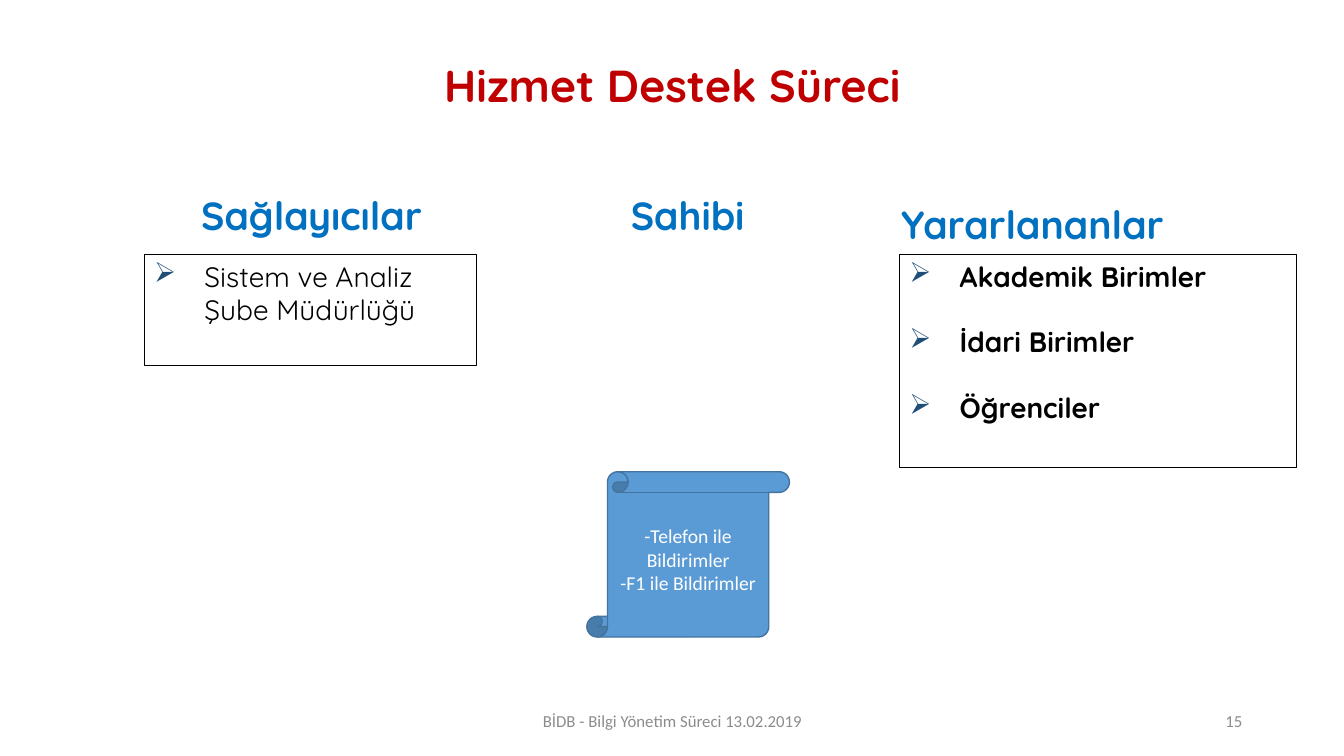
from lxml import etree
from pptx import Presentation
from pptx.dml.color import RGBColor
from pptx.enum import shapes, text
from pptx.oxml import ns
from pptx.util import Inches, Pt

COLORS = {
    "title": "C00000", "heading": "0070C0", "bullet": "1F4E79",
    "body": "000000", "footer": "8C8C8C", "scroll": "5B9BD5",
    "scroll_line": "43739E", "scroll_text": "FFFFFF",
}
ALIGN = text.PP_ALIGN
ANCHOR = text.MSO_ANCHOR


def write(shape, lines, size, color, font="Quicksand", bold=False,
          align=ALIGN.CENTER, anchor=ANCHOR.TOP):
    """Fill a shape with one formatted paragraph per line."""
    frame = shape.text_frame
    frame.text = "\n".join(lines)
    frame.word_wrap = True
    frame.auto_size = text.MSO_AUTO_SIZE.NONE
    frame.vertical_anchor = anchor
    for paragraph in frame.paragraphs:
        paragraph.alignment = align
        for run in paragraph.runs:
            run.font.name = font
            run.font.size = Pt(size)
            run.font.bold = bold
            run.font.color.rgb = RGBColor.from_string(COLORS[color])


def add_bullet(paragraph):
    """Give a paragraph a coloured arrow bullet with a hanging indent."""
    properties = paragraph._p.get_or_add_pPr()
    properties.set("marL", str(Inches(0.5)))
    properties.set("indent", str(Inches(-0.5)))
    bullet_color = etree.SubElement(properties, ns.qn("a:buClr"))
    etree.SubElement(bullet_color, ns.qn("a:srgbClr"), val=COLORS["bullet"])
    etree.SubElement(properties, ns.qn("a:buChar"), char="➢")


prs = Presentation()
prs.slide_width, prs.slide_height = Inches(13.33), Inches(7.5)
slide = prs.slides.add_slide(prs.slide_layouts[5])

# Title
title = slide.shapes.title
title.left, title.top = Inches(0.92), Inches(0.4)
title.width, title.height = Inches(11.5), Inches(1.45)
write(title, ["Hizmet Destek Süreci"], 32, "title", bold=True, anchor=ANCHOR.MIDDLE)
title.text_frame.margin_bottom = Inches(0.55)
title.text_frame.paragraphs[0].line_spacing = 0.9

# Column headings
for label, left, top in [("Sağlayıcılar", 1.12, 1.85), ("Sahibi", 4.85, 1.85),
                         ("Yararlananlar", 8.27, 1.94)]:
    heading = slide.shapes.add_textbox(Inches(left), Inches(top), Inches(3.94), Inches(0.57))
    write(heading, [label], 28, "heading", bold=True)

# Providers and beneficiaries
for parties, left, width, height, bold in [
    (["Sistem ve Analiz Şube Müdürlüğü"], 1.43, 3.3, 1.11, False),
    (["Akademik Birimler", "İdari Birimler", "Öğrenciler"], 8.92, 3.94, 2.12, True),
]:
    party_box = slide.shapes.add_shape(shapes.MSO_SHAPE.RECTANGLE, Inches(left), Inches(2.52),
                                       Inches(width), Inches(height))
    party_box.shadow.inherit = False
    party_box.fill.background()
    party_box.line.color.rgb = RGBColor.from_string(COLORS["body"])
    party_box.line.width = Pt(0.75)
    write(party_box, parties, 20, "body", bold=bold, align=ALIGN.LEFT)
    for paragraph in party_box.text_frame.paragraphs:
        paragraph.space_after = Pt(23)
        add_bullet(paragraph)

# Notification channels
scroll = slide.shapes.add_shape(shapes.MSO_SHAPE.VERTICAL_SCROLL, Inches(5.82), Inches(4.68),
                                Inches(2.01), Inches(1.64))
scroll.shadow.inherit = False
scroll.fill.solid()
scroll.fill.fore_color.rgb = RGBColor.from_string(COLORS["scroll"])
scroll.line.color.rgb = RGBColor.from_string(COLORS["scroll_line"])
scroll.line.width = Pt(1)
write(scroll, ["-Telefon ile Bildirimler", "-F1 ile Bildirimler"], 14, "scroll_text",
      font="Calibri", anchor=ANCHOR.MIDDLE)

# Footer and page number
for label, left, width, align in [
    ("BİDB - Bilgi Yönetim Süreci 13.02.2019", 4.42, 4.5, ALIGN.CENTER),
    ("15", 9.42, 3, ALIGN.RIGHT),
]:
    footer = slide.shapes.add_textbox(Inches(left), Inches(6.95), Inches(width), Inches(0.4))
    write(footer, [label], 12, "footer", font="Calibri", align=align, anchor=ANCHOR.MIDDLE)

prs.save("out.pptx")
